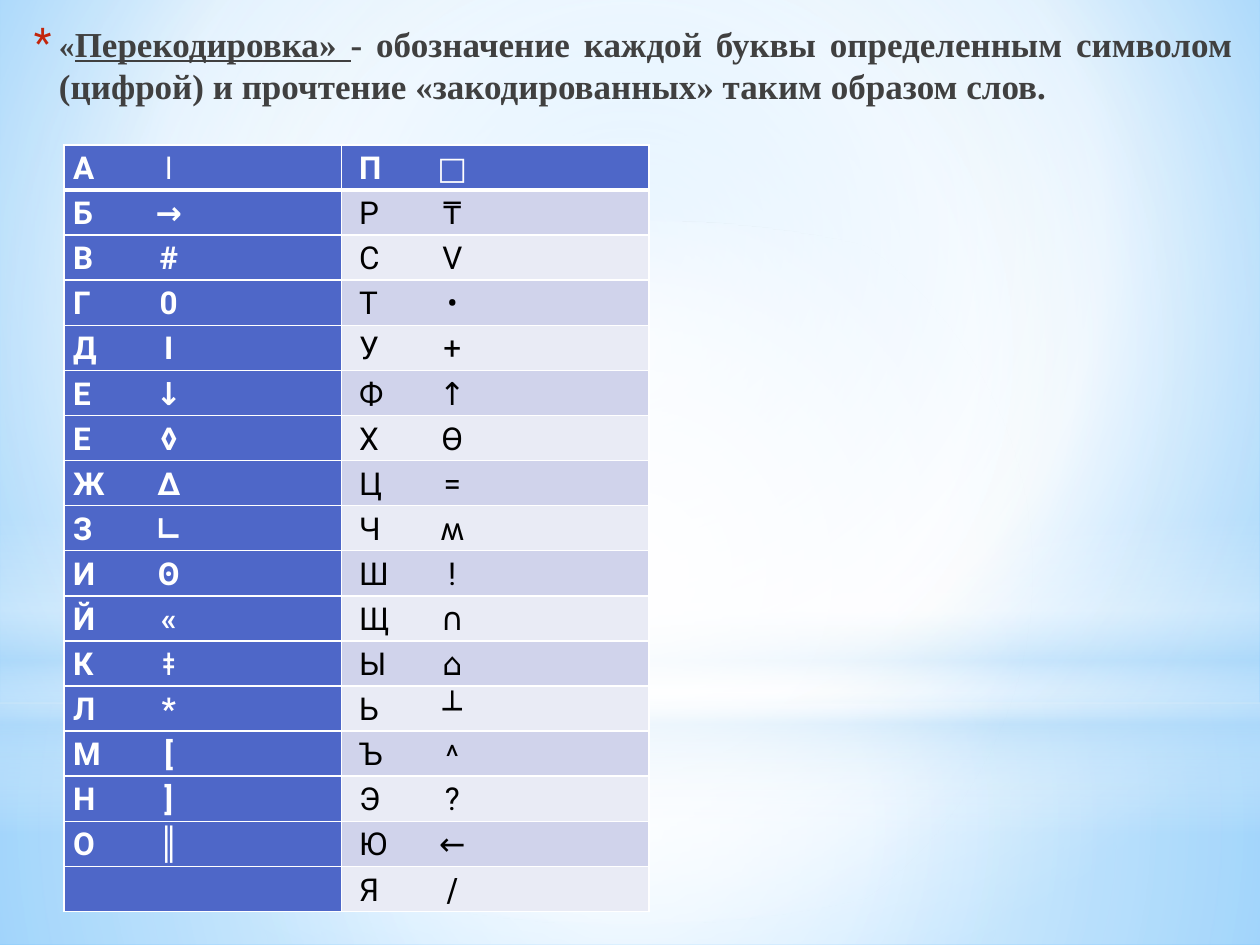
import lxml.etree
import pptx
import pptx.dml.color
import pptx.enum.shapes
import pptx.enum.text
import pptx.oxml
import pptx.oxml.ns
import pptx.util
from pptx.util import Inches

# Content
DEFINITION = [  # text, size key, underlined
    ("«", "quote_size", False),
    ("Перекодировка» ", "text_size", True),
    ("- обозначение каждой буквы определенным символом (цифрой) "
     "и прочтение «закодированных» таким образом слов.", "text_size", False),
]
FIRST_LETTERS = [
    ("А", "ǀ"), ("Б", "→"), ("В", "#"), ("Г", "0"), ("Д", "I"), ("Е", "↓"),
    ("Е", "◊"), ("Ж", "∆"), ("З", "∟"), ("И", "ʘ"), ("Й", "«"), ("К", "ǂ"),
    ("Л", "*"), ("М", "["), ("Н", "]"), ("О", "║"),
]
LAST_LETTERS = [
    ("П", "□"), ("Р", "₸"), ("С", "V"), ("Т", "•"), ("У", "+"), ("Ф", "↑"),
    ("Х", "Ɵ"), ("Ц", "="), ("Ч", "ʍ"), ("Ш", "!"), ("Щ", "∩"), ("Ы", "⌂"),
    ("Ь", "┴"), ("Ъ", "˄"), ("Э", "?"), ("Ю", "←"), ("Я", "∕"),
]
# Table columns: letters, width, left inset, centre of the symbols
COLUMNS = [(FIRST_LETTERS, 2.2, 0.07, 0.76), (LAST_LETTERS, 2.44, 0.14, 0.74)]

THEME = {
    "text_font": "Times New Roman", "table_font": "Roboto",
    "quote_size": 18, "text_size": 20, "table_size": 18,
    "text": "404040", "bullet": "C3260C", "white": "FFFFFF", "black": "000000",
    "accent": "4E67C8", "bands": ("E9EBF5", "D0D3EB"),
}

# Gradient stops: position, colour, opacity in percent
CENTRE = (50, 50, 50, 50)
BACKGROUND = [(0, "9ED5FF", 100), (60, "FFFFFF", 100), (100, "5BB9FF", 100)]
GLOWS = [  # shape, place, stops, focus (None for a vertical gradient)
    ("RECTANGLE", (0, 5.58, 10, 1.92),
     [(0, "FFFFFF", 91), (37, "FFFFFF", 76), (100, "B4DCFA", 79)], CENTRE),
    ("RECTANGLE", (0, 0, 10, 5.58),
     [(0, "FFFFFF", 89), (48, "FFFFFF", 62), (100, "B4DCFA", 79)], CENTRE),
    ("RECTANGLE", (0, 4.12, 10, 2.5),
     [(0, "FFFFFF", 0), (29, "FFFFFF", 30), (45, "B4DCFA", 40),
      (55, "FFFFFF", 26), (65, "B4DCFA", 60), (100, "FFFFFF", 0)], None),
    ("OVAL", (0, 1.75, 10, 5.58), [(0, "FFFFFF", 100), (56, "FFFFFF", 0)], CENTRE),
]


def color(value):
    return pptx.dml.color.RGBColor.from_string(value)


def xml(text):
    namespace = pptx.oxml.ns.nsdecls("a")
    return pptx.oxml.parse_xml(text.replace(">", f" {namespace}>", 1))


def set_gradient(properties, stops, focus):
    """Swap the solid fill in properties for a gradient."""
    marks = "".join(
        f'<a:gs pos="{pos * 1000}"><a:srgbClr val="{value}">'
        f'<a:alpha val="{opacity * 1000}"/></a:srgbClr></a:gs>'
        for pos, value, opacity in stops)
    if focus:
        sides = " ".join(f'{side}="{part * 1000}"' for side, part in zip("ltrb", focus))
        direction = f'<a:path path="circle"><a:fillToRect {sides}/></a:path>'
    else:
        direction = '<a:lin ang="5400000" scaled="0"/>'
    solid = properties.find(pptx.oxml.ns.qn("a:solidFill"))
    gradient = xml(f'<a:gradFill rotWithShape="1"><a:gsLst>{marks}</a:gsLst>{direction}</a:gradFill>')
    properties.replace(solid, gradient)


def style_font(font, name, size, value, bold):
    font.name, font.size, font.bold = name, pptx.util.Pt(size), bold
    font.color.rgb = color(value)


def add_borders(cell, bottom):
    properties = cell._tc.get_or_add_tcPr()
    for index, (side, points) in enumerate((("L", 1), ("R", 1), ("T", 1), ("B", bottom))):
        properties.insert(index, xml(
            f'<a:ln{side} w="{points * 12700}"><a:solidFill>'
            f'<a:srgbClr val="{THEME["white"]}"/></a:solidFill></a:ln{side}>'))


deck = pptx.Presentation()
deck.slide_width, deck.slide_height = Inches(10), Inches(7.5)
page = deck.slides.add_slide(deck.slide_layouts[6])

# Background and glows
page.background.fill.solid()
page.background.fill.fore_color.rgb = color(THEME["white"])
set_gradient(page.element.find(".//" + pptx.oxml.ns.qn("p:bgPr")), BACKGROUND, (20, 10, 20, 60))
for kind, place, stops, focus in GLOWS:
    glow = page.shapes.add_shape(
        getattr(pptx.enum.shapes.MSO_SHAPE, kind), *map(Inches, place))
    glow.shadow.inherit = False
    glow.line.fill.background()
    glow.fill.solid()
    set_gradient(glow.element.spPr, stops, focus)

# Definition
box = page.shapes.add_textbox(*map(Inches, (0.12, 0.13, 9.76, 7.24)))
box.text_frame.word_wrap = True
para = box.text_frame.paragraphs[0]
para.alignment = pptx.enum.text.PP_ALIGN.JUSTIFY
para.space_after = pptx.util.Pt(3)
settings = para._p.get_or_add_pPr()
settings.set("marL", str(Inches(0.25)))
settings.set("indent", str(Inches(-0.2)))
for bullet_part in (
        f'<a:buClr><a:srgbClr val="{THEME["bullet"]}"/></a:buClr>',
        '<a:buSzPct val="130000"></a:buSzPct>',
        f'<a:buFont typeface="{THEME["table_font"]}"></a:buFont>',
        '<a:buChar char="*"></a:buChar>'):
    settings.append(xml(bullet_part))
for text, size, underlined in DEFINITION:
    span = para.add_run()
    span.text = text
    style_font(span.font, THEME["text_font"], THEME[size], THEME["text"], True)
    span.font.underline = underlined

# Code table
row_count = len(LAST_LETTERS)
table = page.shapes.add_table(
    row_count, len(COLUMNS), *map(Inches, (0.51, 1.15, 4.64, 6.09))).table
for row in table.rows:
    row.height = Inches(6.09 / row_count)
for column_index, (letters, width, inset, symbol_centre) in enumerate(COLUMNS):
    table.columns[column_index].width = Inches(width)
    for row_index in range(row_count):
        cell = table.cell(row_index, column_index)
        strong = row_index == 0 or column_index == 0
        cell.fill.solid()
        cell.fill.fore_color.rgb = color(
            THEME["accent"] if strong else THEME["bands"][row_index % 2])
        add_borders(cell, 3 if row_index == 0 else 1)
        cell.margin_left, cell.margin_right = Inches(inset), Inches(0.07)
        cell.margin_top = cell.margin_bottom = 0
        if row_index >= len(letters):
            continue
        para = cell.text_frame.paragraphs[0]
        para.text = "\t".join(letters[row_index])
        para.line_spacing = 1.15
        para._p.get_or_add_pPr().append(xml(
            f'<a:tabLst><a:tab pos="{Inches(symbol_centre)}" algn="ctr"/></a:tabLst>'))
        for span in para.runs:
            style_font(span.font, THEME["table_font"], THEME["table_size"],
                       THEME["white"] if strong else THEME["black"], strong)

deck.save("out.pptx")
